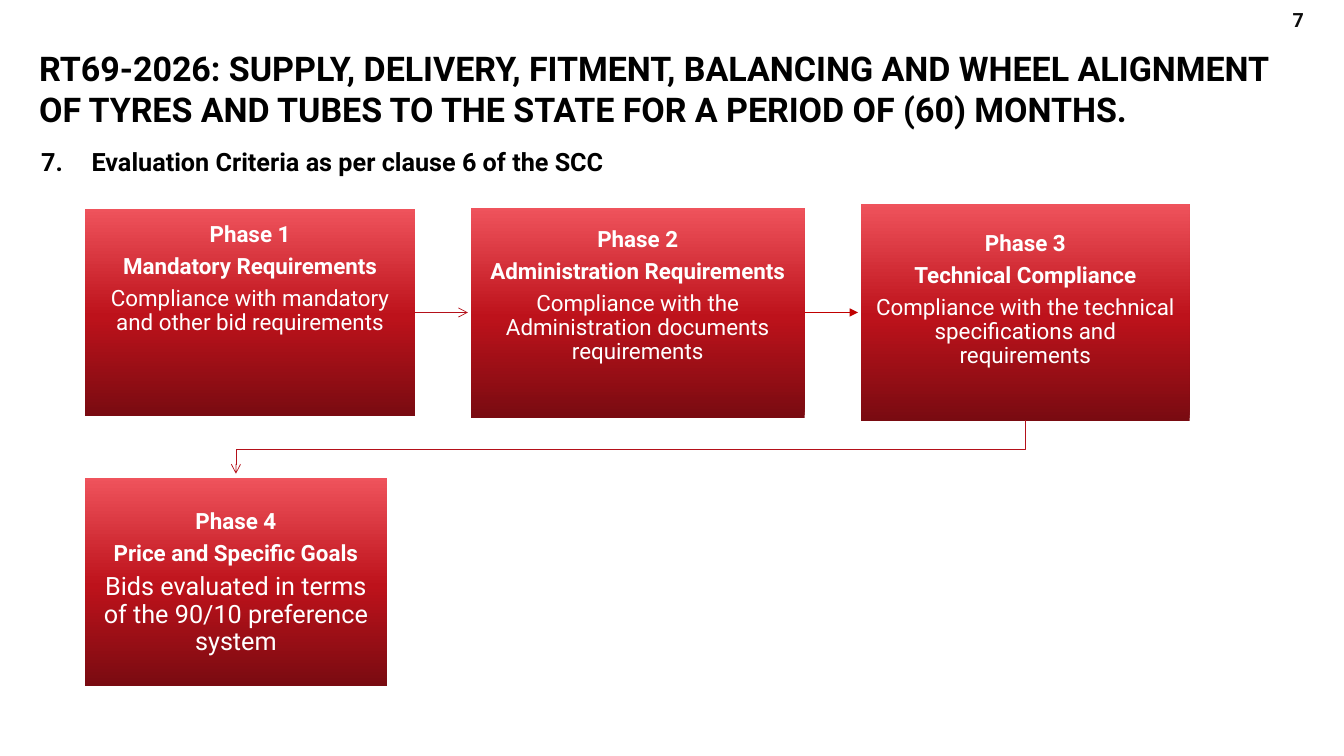
from copy import deepcopy

from lxml import etree
from pptx import Presentation
from pptx.dml.color import RGBColor
from pptx.enum.shapes import MSO_CONNECTOR, MSO_SHAPE
from pptx.enum.text import MSO_ANCHOR, PP_ALIGN
from pptx.oxml.ns import qn
from pptx.util import Inches, Pt

RECTANGLE = MSO_SHAPE.RECTANGLE
STRAIGHT = MSO_CONNECTOR.STRAIGHT
TOP, MIDDLE = MSO_ANCHOR.TOP, MSO_ANCHOR.MIDDLE
LEFT, CENTER, RIGHT = PP_ALIGN.LEFT, PP_ALIGN.CENTER, PP_ALIGN.RIGHT
FONT = "Roboto"
COLORS = {
    "black": "000000",
    "number": "0D0D0D",
    "white": "FFFFFF",
    "dark red": "790B11",
    "red": "BD121B",
    "light red": "EF535C",
    "arrow": "B4111A",
    "bright arrow": "C00000",
}


def add_text(paragraph, text, size, color, bold=True, align=LEFT):
    paragraph.alignment = align
    run = paragraph.add_run()
    run.text = text
    run.font.name = FONT
    run.font.size = Pt(size)
    run.font.bold = bold
    run.font.color.rgb = RGBColor.from_string(COLORS[color])


def style_arrow(shape, color, head):
    shape.line.color.rgb = RGBColor.from_string(COLORS[color])
    shape.line.width = Pt(0.5)
    properties = shape._element.spPr
    etree.SubElement(properties.find(qn("a:ln")), qn("a:tailEnd"), type=head)
    if properties.find(qn("a:effectLst")) is None:
        etree.SubElement(properties, qn("a:effectLst"))


presentation = Presentation()
presentation.slide_width = Inches(13.33)
presentation.slide_height = Inches(7.5)
slide = presentation.slides.add_slide(presentation.slide_layouts[6])

# Page number, title and heading
headings = [
    ("7", 12.44, 0, 0.59, 0.4, 14, "number", RIGHT, MIDDLE),
    ("RT69-2026: SUPPLY, DELIVERY, FITMENT, BALANCING AND WHEEL ALIGNMENT "
     "OF TYRES AND TUBES TO THE STATE FOR A PERIOD OF (60) MONTHS.",
     0.29, 0.42, 12.73, 0.98, 24.3, "black", LEFT, TOP),
    ("Evaluation Criteria as per clause 6 of the SCC",
     0.31, 1.44, 12.72, 0.4, 18, "black", LEFT, TOP),
]
for text, left, top, width, height, size, color, align, anchor in headings:
    box = slide.shapes.add_textbox(Inches(left), Inches(top), Inches(width), Inches(height))
    frame = box.text_frame
    frame.word_wrap = True
    frame.vertical_anchor = anchor
    add_text(frame.paragraphs[0], text, size, color, align=align)

# Automatic number of the heading, the last box added
heading = frame.paragraphs[0]
heading.line_spacing = 0.9
heading_properties = heading._p.get_or_add_pPr()
heading_properties.set("marL", str(Inches(0.5)))
heading_properties.set("indent", str(Inches(-0.5)))
etree.SubElement(heading_properties, qn("a:buFont"), typeface="+mj-lt")
etree.SubElement(heading_properties, qn("a:buAutoNum"), type="arabicPeriod", startAt="7")

# Phase boxes: left, top, width, height, side inset, top inset, texts, body size
phases = [
    (0.84, 2.07, 3.28, 2.06, 0.14, 0.14, "Phase 1", "Mandatory Requirements",
     "Compliance with mandatory and other bid requirements", 16),
    (4.67, 2.06, 3.31, 2.09, 0.12, 0.2, "Phase 2", "Administration Requirements",
     "Compliance with the Administration documents requirements", 16),
    (8.54, 2.02, 3.26, 2.16, 0.14, 0.28, "Phase 3", "Technical Compliance",
     "Compliance with the technical specifications and requirements", 16),
    (0.84, 4.74, 3, 2.07, 0.12, 0.32, "Phase 4", "Price and Specific Goals",
     "Bids evaluated in terms of the 90/10 preference system", 18),
]
gradient = [(0, "dark red"), (0.48, "red"), (1, "light red")]
for left, top, width, height, side, inset, phase, name, body, body_size in phases:
    box = slide.shapes.add_shape(
        RECTANGLE, Inches(left), Inches(top), Inches(width), Inches(height))
    box.shadow.inherit = False
    box.line.fill.background()
    box.fill.gradient()
    box.fill.gradient_angle = 90
    stop_list = box._element.spPr.find(qn("a:gradFill")).find(qn("a:gsLst"))
    stop_list.append(deepcopy(stop_list[-1]))
    for stop, (position, color) in zip(box.fill.gradient_stops, gradient):
        stop.position = position
        stop.color.rgb = RGBColor.from_string(COLORS[color])

    frame = box.text_frame
    frame.word_wrap = True
    frame.vertical_anchor = TOP
    frame.margin_left = frame.margin_right = Inches(side)
    frame.margin_top = Inches(inset)
    frame.margin_bottom = 0
    lines = [(phase, 16, True), (name, 16, True), (body, body_size, False)]
    for index, (text, size, bold) in enumerate(lines):
        paragraph = frame.add_paragraph() if index else frame.paragraphs[0]
        paragraph.line_spacing = 0.9
        paragraph.space_after = Pt(5.6)
        add_text(paragraph, text, size, "white", bold, CENTER)

# Arrows along the top row
for start, color, head in [(4.11, "arrow", "arrow"), (7.98, "bright arrow", "triangle")]:
    arrow = slide.shapes.add_connector(
        STRAIGHT, Inches(start), Inches(3.1), Inches(start + 0.53), Inches(3.1))
    style_arrow(arrow, color, head)

# Bent arrow from phase 3 down to phase 4
builder = slide.shapes.build_freeform(Inches(10.17), Inches(4.17))
bends = [(10.17, 4.46), (2.34, 4.46), (2.34, 4.7)]
builder.add_line_segments([(Inches(x), Inches(y)) for x, y in bends], close=False)
bent_arrow = builder.convert_to_shape()
bent_arrow.shadow.inherit = False
bent_arrow.fill.background()
style_arrow(bent_arrow, "arrow", "arrow")

presentation.save("out.pptx")
